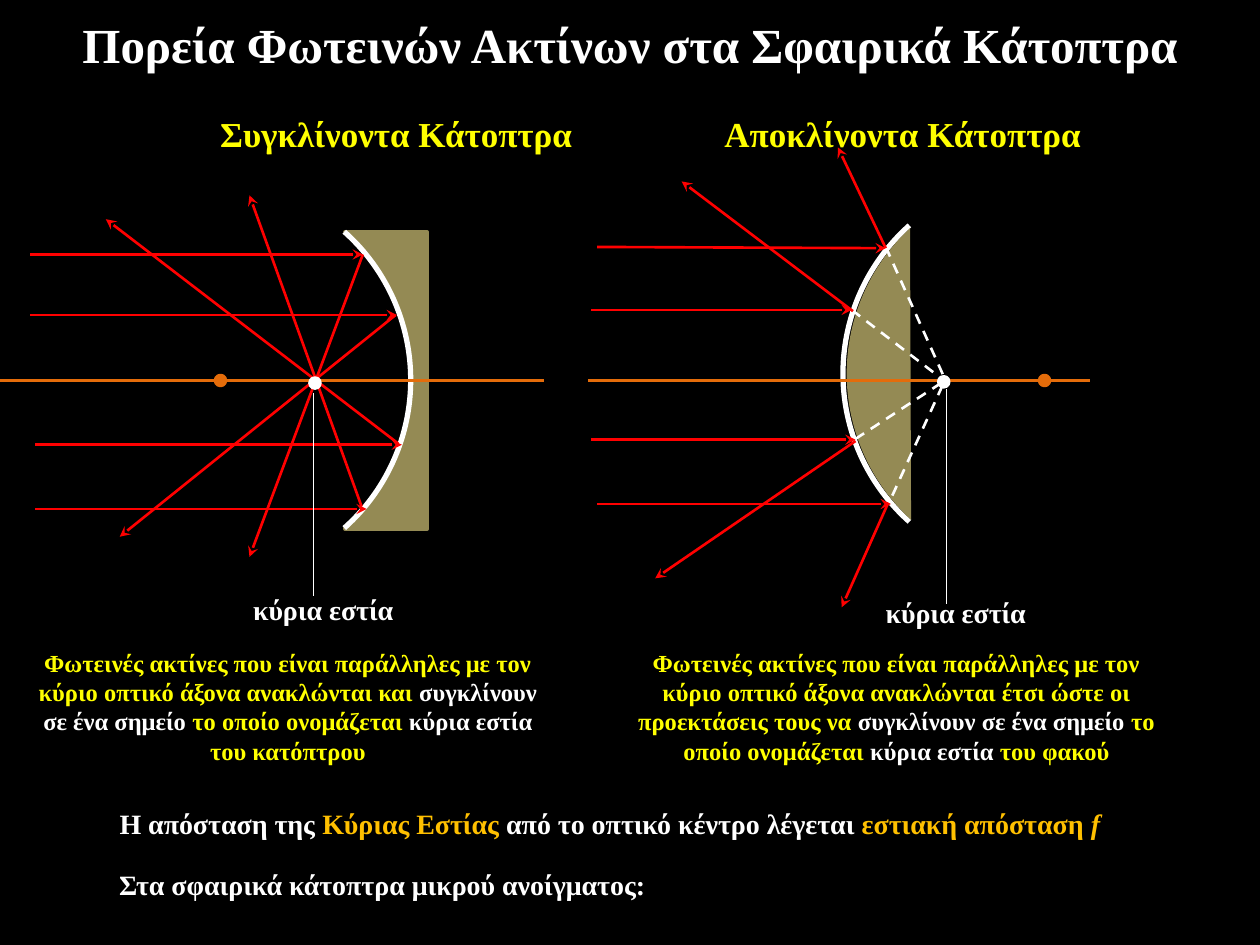
from lxml import etree
from pptx import Presentation
from pptx.dml.color import RGBColor
from pptx.enum.dml import MSO_LINE
from pptx.enum.shapes import MSO_CONNECTOR, MSO_SHAPE
from pptx.enum.text import MSO_ANCHOR, MSO_AUTO_SIZE, PP_ALIGN
from pptx.oxml.ns import qn
from pptx.util import Inches, Pt

STRAIGHT = MSO_CONNECTOR.STRAIGHT
RECTANGLE, ARC, CHORD, OVAL = (MSO_SHAPE.RECTANGLE, MSO_SHAPE.ARC,
                               MSO_SHAPE.CHORD, MSO_SHAPE.OVAL)
CENTER, LEFT = PP_ALIGN.CENTER, PP_ALIGN.LEFT
TOP, MIDDLE = MSO_ANCHOR.TOP, MSO_ANCHOR.MIDDLE
DASH = MSO_LINE.DASH

FONT = "Times New Roman"
BLACK, WHITE, YELLOW, RED = "000000", "FFFFFF", "FFFF00", "FF0000"
ORANGE, GOLD, OLIVE = "E46C0A", "FFC000", "948A54"

# Content: text as (words, colour) spans
TITLE = [("Πορεία Φωτεινών Ακτίνων στα Σφαιρικά Κάτοπτρα", WHITE)]
FOCUS_LABEL = [("κύρια εστία", WHITE)]
FOCAL_LENGTH = [("Η απόσταση της ", WHITE), ("Κύριας Εστίας ", GOLD),
                ("από το οπτικό κέντρο λέγεται ", WHITE),
                ("εστιακή απόσταση ", GOLD), ("f", GOLD, True)]
SMALL_APERTURE = [("Στα σφαιρικά κάτοπτρα μικρού ανοίγματος:", WHITE)]
CONVERGE = [("συγκλίνουν σε ένα σημείο ", WHITE), ("το οποίο ονομάζεται ", YELLOW),
            ("κύρια εστία ", WHITE)]
PARALLEL = "Φωτεινές ακτίνες που είναι παράλληλες με τον κύριο οπτικό άξονα ανακλώνται "

# Lines as (x1, y1, x2, y2) in inches
AXIS_Y = 3.02
MIRRORS = [
    {"heading": "Συγκλίνοντα Κάτοπτρα", "heading_x": 1.61,
     "note": [(PARALLEL + "και ", YELLOW), *CONVERGE, ("του κατόπτρου", YELLOW)],
     "note_x": 0.12, "axis": (-0.01, 4.32), "center_x": 1.75,
     "focus": (2.5, 3.04), "pointer": (2.49, 3.12, 2.49, 4.73), "label": (1.91, 4.65),
     "incident": [(0.24, 2.02, 2.88, 2.02), (0.24, 2.5, 3.15, 2.5),
                  (0.28, 4.04, 2.91, 4.04), (0.28, 3.53, 3.19, 3.53)],
     "extensions": [],
     "reflected": [(2.88, 2.02, 1.98, 4.42), (3.14, 2.5, 0.95, 4.26),
                   (3.16, 3.52, 0.84, 1.74), (2.87, 4.02, 1.98, 1.55)]},
    {"heading": "Αποκλίνοντα Κάτοπτρα", "heading_x": 5.63,
     "note": [(PARALLEL + "έτσι ώστε οι προεκτάσεις τους να ", YELLOW), *CONVERGE,
              ("του φακού", YELLOW)],
     "note_x": 4.95, "axis": (4.67, 8.65), "center_x": 8.29,
     "focus": (7.49, 3.03), "pointer": (7.51, 3.09, 7.51, 4.79), "label": (6.93, 4.68),
     "incident": [(4.74, 1.96, 7.03, 1.97), (4.69, 2.46, 6.76, 2.46),
                  (4.74, 4, 7.07, 4), (4.69, 3.49, 6.79, 3.49)],
     "extensions": [(7.03, 1.96, 7.5, 3.01), (6.76, 2.46, 7.48, 3.01),
                    (7.48, 3.06, 7.07, 3.96), (7.47, 3.04, 6.78, 3.49)],
     "reflected": [(7.03, 1.97, 6.65, 1.17), (6.77, 2.47, 5.41, 1.44),
                   (6.79, 3.5, 5.2, 4.59), (7.05, 3.99, 6.68, 4.82)]},
]
MIRROR_SIZE = 3.15
HALF_ANGLE = 48.3  # the reflecting surface spans this much either side of the axis
DOT = 0.08

deck = Presentation()
deck.slide_width, deck.slide_height = Inches(10), Inches(7.5)
page = deck.slides.add_slide(deck.slide_layouts[6])


def rgb(color):
    return RGBColor.from_string(color)


page.background.fill.solid()
page.background.fill.fore_color.rgb = rgb(BLACK)


def add_text(spans, left, top, width, height, *, size, align=CENTER,
             anchor=TOP, wrap=True):
    box = page.shapes.add_textbox(*map(Inches, (left, top, width, height)))
    frame = box.text_frame
    frame.word_wrap = wrap
    frame.vertical_anchor = anchor
    frame.auto_size = MSO_AUTO_SIZE.NONE if anchor == MIDDLE else MSO_AUTO_SIZE.SHAPE_TO_FIT_TEXT
    para = frame.paragraphs[0]
    para.alignment = align
    for words, color, *italic in spans:
        span = para.add_run()
        span.text = words
        font = span.font
        font.name, font.size, font.bold = FONT, Pt(size), True
        font.color.rgb = rgb(color)
        if italic:
            font.italic = True


def add_figure(kind, left, top, width, height, *, fill, line=None,
               weight=2, angles=()):
    figure = page.shapes.add_shape(kind, *map(Inches, (left, top, width, height)))
    figure.shadow.inherit = False
    figure.fill.solid()
    figure.fill.fore_color.rgb = rgb(fill)
    if line:
        figure.line.color.rgb = rgb(line)
        figure.line.width = Pt(weight)
    else:
        figure.line.fill.background()
    for index, degrees in enumerate(angles):
        figure.adjustments[index] = degrees * 0.6  # 60000 units a degree, over 100000


def add_dot(x, y, color):
    add_figure(OVAL, x - DOT / 2, y - DOT / 2, DOT, DOT, fill=color, line=color)


def add_line(ends, color, *, weight=1.5, dash=None, arrow=False):
    line = page.shapes.add_connector(STRAIGHT, *map(Inches, ends))
    line.line.color.rgb = rgb(color)
    line.line.width = Pt(weight)
    if dash:
        line.line.dash_style = dash
    if arrow:
        etree.SubElement(line.line._get_or_add_ln(), qn("a:tailEnd"), type="stealth")
    etree.SubElement(line._element.spPr, qn("a:effectLst"))


# Mirrors: the black sector of the arc hollows out the concave body
add_figure(RECTANGLE, 2.74, 1.84, 0.65, 2.36, fill=OLIVE, line=OLIVE)
for left, top, middle in ((0.11, 1.44, 0), (6.69, 1.39, 180)):
    add_figure(ARC, left, top, MIRROR_SIZE, MIRROR_SIZE, fill=BLACK, line=WHITE, weight=3,
               angles=((middle - HALF_ANGLE) % 360, middle + HALF_ANGLE))
add_figure(CHORD, 6.72, 1.39, MIRROR_SIZE, MIRROR_SIZE, fill=OLIVE, angles=(132.5, 227.1))

# Headings, axes, rays and notes for each mirror
add_text(TITLE, 0, 0.02, 10, 0.66, size=28, anchor=MIDDLE)
for mirror in MIRRORS:
    start, end = mirror["axis"]
    add_dot(mirror["center_x"], AXIS_Y, ORANGE)
    add_line((start, AXIS_Y, end, AXIS_Y), ORANGE)
    add_text([(mirror["heading"], YELLOW)], mirror["heading_x"], 0.84, 3.07, 0.44, size=20)
    add_text(mirror["note"], mirror["note_x"], 5.09, 4.33, 1.04, size=14)
    for ray in mirror["incident"]:
        add_line(ray, RED, arrow=True)
    for ray in mirror["extensions"]:
        add_line(ray, WHITE, dash=DASH)
    for ray in mirror["reflected"]:
        add_line(ray, RED, arrow=True)
    add_dot(*mirror["focus"], WHITE)
    add_line(mirror["pointer"], WHITE, weight=0.75)
    add_text(FOCUS_LABEL, *mirror["label"], 1.39, 0.37, size=16, align=LEFT, wrap=False)

# Closing statements
add_text(FOCAL_LENGTH, 0.03, 6.35, 9.62, 0.37, size=16)
add_text(SMALL_APERTURE, 0.83, 6.84, 4.41, 0.37, size=16)

deck.save("out.pptx")
